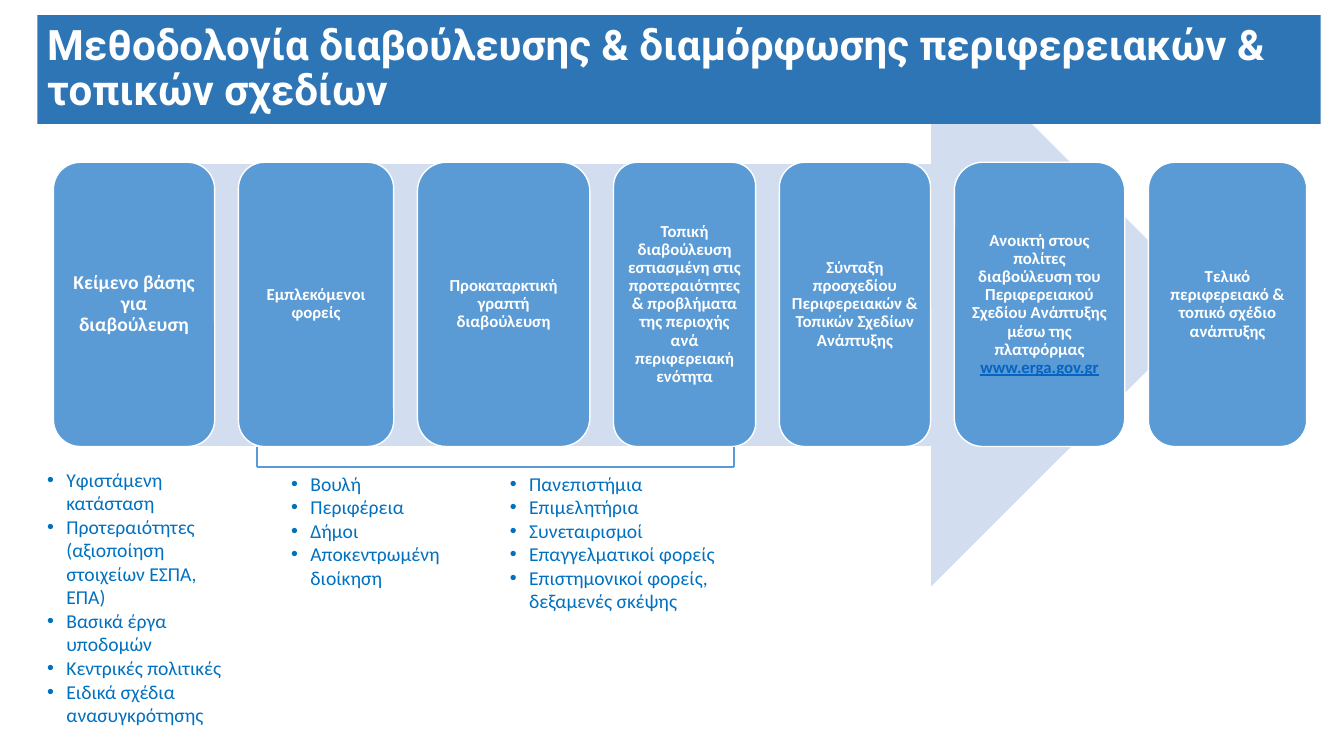
import pptx
import pptx.util
import pptx.dml.color
import pptx.enum.shapes
import pptx.enum.text
import pptx.oxml
import pptx.oxml.ns

RGBColor = pptx.dml.color.RGBColor
WHITE = RGBColor(0xFF, 0xFF, 0xFF)
PALE_BLUE = RGBColor(0xD2, 0xDE, 0xEF)
CARD_BLUE = RGBColor(0x5B, 0x9B, 0xD5)
TITLE_BLUE = RGBColor(0x2E, 0x75, 0xB6)
TEXT_BLUE = RGBColor(0x00, 0x70, 0xC0)
LINK_BLUE = RGBColor(0x05, 0x63, 0xC1)

COLUMNS, ROWS = 13.33, 7.5
CELL = pptx.util.Inches(1)  # side of one grid column or row

SHAPES = pptx.enum.shapes.MSO_SHAPE
ALIGN = pptx.enum.text.PP_ALIGN
ANCHOR = pptx.enum.text.MSO_ANCHOR

TITLE = "Μεθοδολογία διαβούλευσης & διαμόρφωσης περιφερειακών & τοπικών σχεδίων"

# Each step: width in columns, font size, runs of (text, is an address)
STEPS = [
    (1.6, 14, [("Κείμενο βάσης για διαβούλευση", False)]),
    (1.54, 12, [("Εμπλεκόμενοι φορείς", False)]),
    (1.71, 12, [("Προκαταρκτική γραπτή διαβούλευση", False)]),
    (1.41, 12, [("Τοπική διαβούλευση εστιασμένη στις προτεραιότητες & προβλήματα "
                 "της περιοχής ανά περιφερειακή ενότητα", False)]),
    (1.5, 12, [("Σύνταξη προσχεδίου Περιφερειακών & Τοπικών Σχεδίων Ανάπτυξης", False)]),
    (1.69, 12, [("Ανοικτή στους πολίτες διαβούλευση του Περιφερειακού Σχεδίου "
                 "Ανάπτυξης μέσω της πλατφόρμας ", False), ("www.erga.gov.gr", True)]),
    (1.57, 12, [("Τελικό περιφερειακό & τοπικό σχέδιο ανάπτυξης", False)]),
]
STEPS_LEFT, STEPS_RIGHT = 0.53, 12.96
STEPS_TOP, STEPS_HEIGHT = 1.61, 2.82

# Each list: left, top, width, height, items
LISTS = [
    (0.37, 4.59, 2.04, 2.69, [
        "Υφιστάμενη κατάσταση", "Προτεραιότητες (αξιοποίηση στοιχείων ΕΣΠΑ, ΕΠΑ)",
        "Βασικά έργα υποδομών", "Κεντρικές πολιτικές", "Ειδικά σχέδια ανασυγκρότησης"]),
    (2.79, 4.63, 2.37, 1.4, [
        "Βουλή", "Περιφέρεια", "Δήμοι", "Αποκεντρωμένη διοίκηση"]),
    (4.96, 4.63, 2.37, 1.6, [
        "Πανεπιστήμια", "Επιμελητήρια", "Συνεταιρισμοί", "Επαγγελματικοί φορείς",
        "Επιστημονικοί φορείς, δεξαμενές σκέψης"]),
]

BRACKET_LEFT, BRACKET_RIGHT, BRACKET_TOP, BRACKET_BOTTOM = 2.55, 7.28, 4.43, 4.63


def cells(*lengths):
    """Turn grid lengths into slide units."""
    return [round(length * CELL) for length in lengths]


def apply_format(target, values):
    for name, value in values.items():
        setattr(target, name, value)


class SlideBuilder:
    """Holds the text styles and the slide being drawn."""

    title_font = {"name": "Roboto", "size": pptx.util.Pt(30), "bold": True}
    step_font = {"name": "Calibri", "bold": True}
    list_font = {"name": "Calibri", "size": pptx.util.Pt(14)}
    indent = 0.19

    def __init__(self, presentation):
        self.slide = presentation.slides.add_slide(presentation.slide_layouts[6])

    def shape(self, kind, place, fill, outline=None):
        shape = self.slide.shapes.add_shape(kind, *cells(*place))
        shape.shadow.inherit = False
        shape.fill.solid()
        shape.fill.fore_color.rgb = fill
        if outline is None:
            shape.line.fill.background()
        else:
            shape.line.color.rgb = outline
            shape.line.width = pptx.util.Pt(1)
        return shape

    def run(self, paragraph, text, font, color):
        run = paragraph.add_run()
        run.text = text
        apply_format(run.font, font)
        run.font.color.rgb = color
        return run

    def title(self, place, text):
        frame = self.shape(SHAPES.RECTANGLE, place, TITLE_BLUE).text_frame
        apply_format(frame, {"word_wrap": True, "vertical_anchor": ANCHOR.MIDDLE})
        paragraph = frame.paragraphs[0]
        apply_format(paragraph, {"alignment": ALIGN.LEFT, "line_spacing": 0.9})
        self.run(paragraph, text, self.title_font, WHITE)

    def step(self, place, size, runs):
        frame = self.shape(SHAPES.ROUNDED_RECTANGLE, place, CARD_BLUE, WHITE).text_frame
        apply_format(frame, {"word_wrap": True, "vertical_anchor": ANCHOR.MIDDLE})
        sides = ("left", "top", "right", "bottom")
        apply_format(frame, {f"margin_{side}": cells(0.05)[0] for side in sides})
        paragraph = frame.paragraphs[0]
        apply_format(paragraph, {"alignment": ALIGN.CENTER, "line_spacing": 0.9})
        font = {**self.step_font, "size": pptx.util.Pt(size)}
        for text, is_address in runs:
            color = LINK_BLUE if is_address else WHITE
            self.run(paragraph, text, {**font, "underline": is_address}, color)

    def bullet_list(self, place, items):
        frame = self.slide.shapes.add_textbox(*cells(*place)).text_frame
        frame.word_wrap = True
        indent = cells(self.indent)[0]
        for index, item in enumerate(items):
            paragraph = frame.add_paragraph() if index else frame.paragraphs[0]
            properties = paragraph._p.get_or_add_pPr()
            properties.set("marL", str(indent))
            properties.set("indent", str(-indent))
            properties.append(pptx.oxml.parse_xml(
                f'<a:buFont {pptx.oxml.ns.nsdecls("a")} typeface="Arial"/>'))
            properties.append(pptx.oxml.parse_xml(
                f'<a:buChar {pptx.oxml.ns.nsdecls("a")} char="•"/>'))
            self.run(paragraph, item, self.list_font, TEXT_BLUE)

    def line(self, start, end):
        connector = self.slide.shapes.add_connector(
            pptx.enum.shapes.MSO_CONNECTOR.STRAIGHT, *cells(*start, *end))
        connector.line.color.rgb = CARD_BLUE
        connector.line.width = pptx.util.Pt(1.5)
        connector._element.spPr.append(pptx.oxml.parse_xml(
            f'<a:effectLst {pptx.oxml.ns.nsdecls("a")}/>'))


def main():
    presentation = pptx.Presentation()
    presentation.slide_width, presentation.slide_height = cells(COLUMNS, ROWS)
    builder = SlideBuilder(presentation)

    builder.shape(SHAPES.RIGHT_ARROW, (1.46, 0.23, 10.57, 5.59), PALE_BLUE)

    total_width = sum(width for width, _, _ in STEPS)
    gap = (STEPS_RIGHT - STEPS_LEFT - total_width) / (len(STEPS) - 1)
    left = STEPS_LEFT
    for width, size, runs in STEPS:
        builder.step((left, STEPS_TOP, width, STEPS_HEIGHT), size, runs)
        left += width + gap

    builder.title((0.37, 0.15, 12.73, 1.08), TITLE)

    for *place, items in LISTS:
        builder.bullet_list(place, items)

    builder.line((BRACKET_LEFT, BRACKET_BOTTOM), (BRACKET_RIGHT, BRACKET_BOTTOM))
    for end in (BRACKET_LEFT, BRACKET_RIGHT):
        builder.line((end, BRACKET_TOP), (end, BRACKET_BOTTOM))

    presentation.save("out.pptx")


if __name__ == "__main__":
    main()
